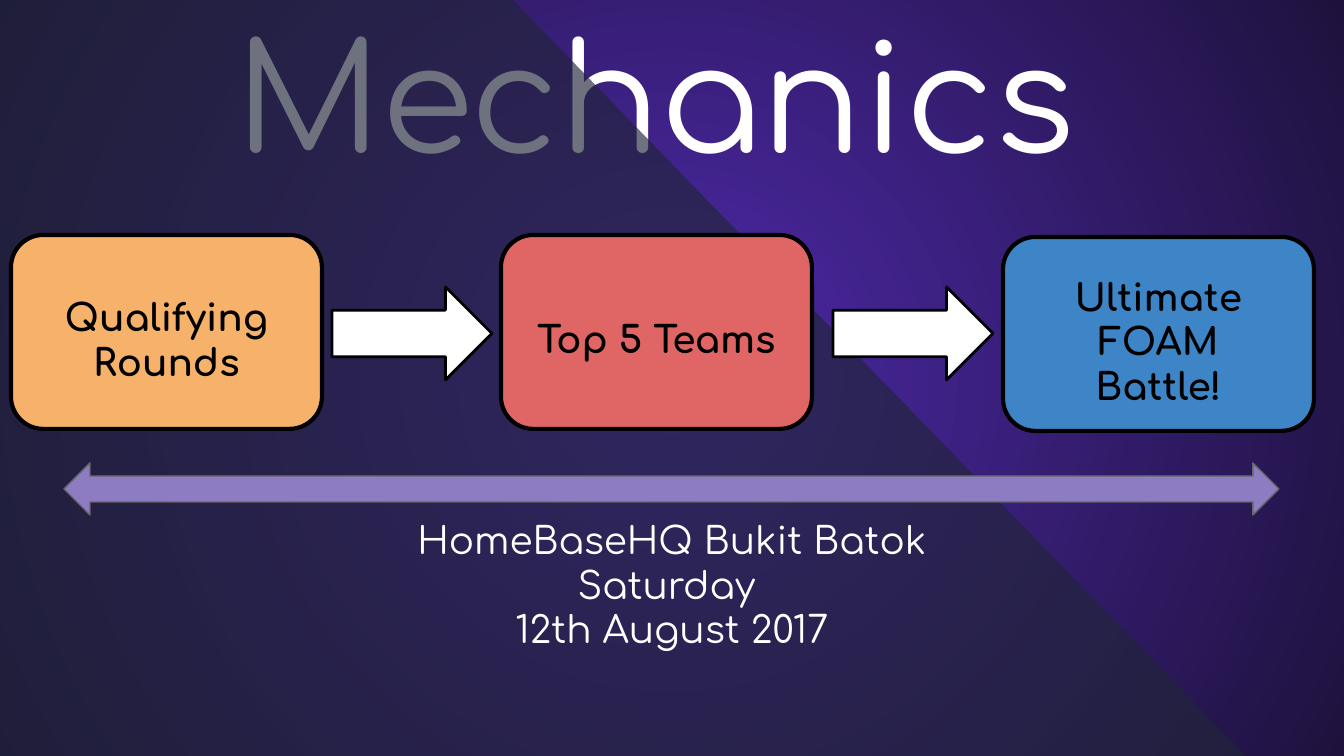
import dataclasses

import lxml.etree
import pptx
import pptx.dml.color
import pptx.enum.shapes
import pptx.enum.text
import pptx.oxml.ns
import pptx.util

SHAPE = pptx.enum.shapes.MSO_SHAPE
ALIGN = pptx.enum.text.PP_ALIGN
ANCHOR = pptx.enum.text.MSO_ANCHOR
PX = 914400 / 134.4


@dataclasses.dataclass(frozen=True)
class Theme:
    font: str = "Comfortaa"
    title_size: int = 80
    text_size: int = 20
    white: str = "FFFFFF"
    black: str = "000000"
    glow: str = "4E29AA"
    night: str = "1E123D"
    panel: str = "212539"
    orange: str = "F6B26B"
    red: str = "E06666"
    blue: str = "3D85C6"
    violet: str = "8E7CC3"
    grey: str = "666666"


def px(length):
    return pptx.util.Emu(round(length * PX))


def rgb(value):
    return pptx.dml.color.RGBColor.from_string(value)


def find_xml(parent, tag):
    return parent.find(".//" + pptx.oxml.ns.qn(tag))


def add_xml(parent, tag, values):
    return lxml.etree.SubElement(parent, pptx.oxml.ns.qn(tag), values)


def apply(target, values):
    for name, value in values.items():
        setattr(target, name, value)


class SlideBuilder:
    def __init__(self, slide, theme):
        self.slide = slide
        self.theme = theme

    def background(self):
        fill = self.slide.background.fill
        fill.gradient()
        for stop, color in zip(fill.gradient_stops, (self.theme.glow, self.theme.night)):
            stop.color.rgb = rgb(color)
        # Turn the linear gradient into a circular one around the centre
        linear = find_xml(self.slide.element, "a:lin")
        gradient = linear.getparent()
        gradient.remove(linear)
        circle = add_xml(gradient, "a:path", {"path": "circle"})
        add_xml(circle, "a:fillToRect", dict.fromkeys("ltrb", "50000"))

    def panel(self, points, color, opacity):
        start, *rest = [(px(x), px(y)) for x, y in points]
        outline = self.slide.shapes.build_freeform(*start)
        outline.add_line_segments(rest, close=True)
        shape = outline.convert_to_shape()
        self.paint(shape, color)
        tint = find_xml(shape.element, "a:srgbClr")
        add_xml(tint, "a:alpha", {"val": str(opacity * 1000)})

    def paint(self, shape, fill, line=None, width=0):
        shape.shadow.inherit = False
        shape.fill.solid()
        shape.fill.fore_color.rgb = rgb(fill)
        if line is None:
            shape.line.fill.background()
        else:
            shape.line.color.rgb = rgb(line)
            shape.line.width = pptx.util.Pt(width)

    def shape(self, kind, place, fill, line, width):
        shape = self.slide.shapes.add_shape(kind, *map(px, place))
        self.paint(shape, fill, line, width)
        return shape

    def set_text(self, shape, lines, size, color, align=ALIGN.CENTER,
                 anchor=ANCHOR.TOP, bold=False, top=13):
        frame = shape.text_frame
        apply(frame, {
            "word_wrap": True,
            "auto_size": pptx.enum.text.MSO_AUTO_SIZE.NONE,
            "vertical_anchor": anchor,
            "margin_left": px(13), "margin_right": px(13),
            "margin_top": px(top), "margin_bottom": px(13),
        })
        frame.text = "\n".join(lines)
        for para in frame.paragraphs:
            para.alignment = align
            apply(para.font, {"name": self.theme.font, "bold": bold,
                              "size": pptx.util.Pt(size)})
            para.font.color.rgb = rgb(color)

    def title(self, place, text):
        title = self.slide.shapes.title
        apply(title, dict(zip(("left", "top", "width", "height"), map(px, place))))
        self.set_text(title, [text], self.theme.title_size, self.theme.white, ALIGN.LEFT)

    def stage(self, place, lines, fill):
        box = self.shape(SHAPE.ROUNDED_RECTANGLE, place, fill, self.theme.black, 2.25)
        # The deeper top margin sets the label a little below the middle
        self.set_text(box, lines, self.theme.text_size, self.theme.black,
                      anchor=ANCHOR.MIDDLE, bold=True, top=27)

    def caption(self, place, lines):
        box = self.slide.shapes.add_textbox(*map(px, place))
        self.set_text(box, lines, self.theme.text_size, self.theme.white)


def main():
    theme = Theme()
    deck = pptx.Presentation()
    deck.slide_width, deck.slide_height = px(1344), px(756)
    page = SlideBuilder(deck.slides.add_slide(deck.slide_layouts[5]), theme)

    # Backdrop
    page.background()
    page.panel([(512, -1), (0, 0), (0, 756), (1246, 756)], theme.panel, 65)

    # Title
    page.title((222, -9, 899, 156), "Mechanics")

    # Stages of the contest
    stages = [
        (11, 235, ["Qualifying Rounds"], theme.orange),
        (501, 235, ["Top 5 Teams"], theme.red),
        (1003, 237, ["Ultimate", "FOAM", "Battle!"], theme.blue),
    ]
    for left, top, lines, fill in stages:
        page.stage((left, top, 311, 194), lines, fill)

    # Steps between the stages
    for left in (332, 833):
        page.shape(SHAPE.RIGHT_ARROW, (left, 287, 160, 93),
                   theme.white, theme.black, 1.5)

    # Venue and date across all stages
    page.shape(SHAPE.LEFT_RIGHT_ARROW, (64, 463, 1215, 52),
               theme.violet, theme.grey, 0.75)
    page.caption((362, 504, 620, 168),
                 ["HomeBaseHQ Bukit Batok", "Saturday ", "12th August 2017"])

    deck.save("out.pptx")


if __name__ == "__main__":
    main()
